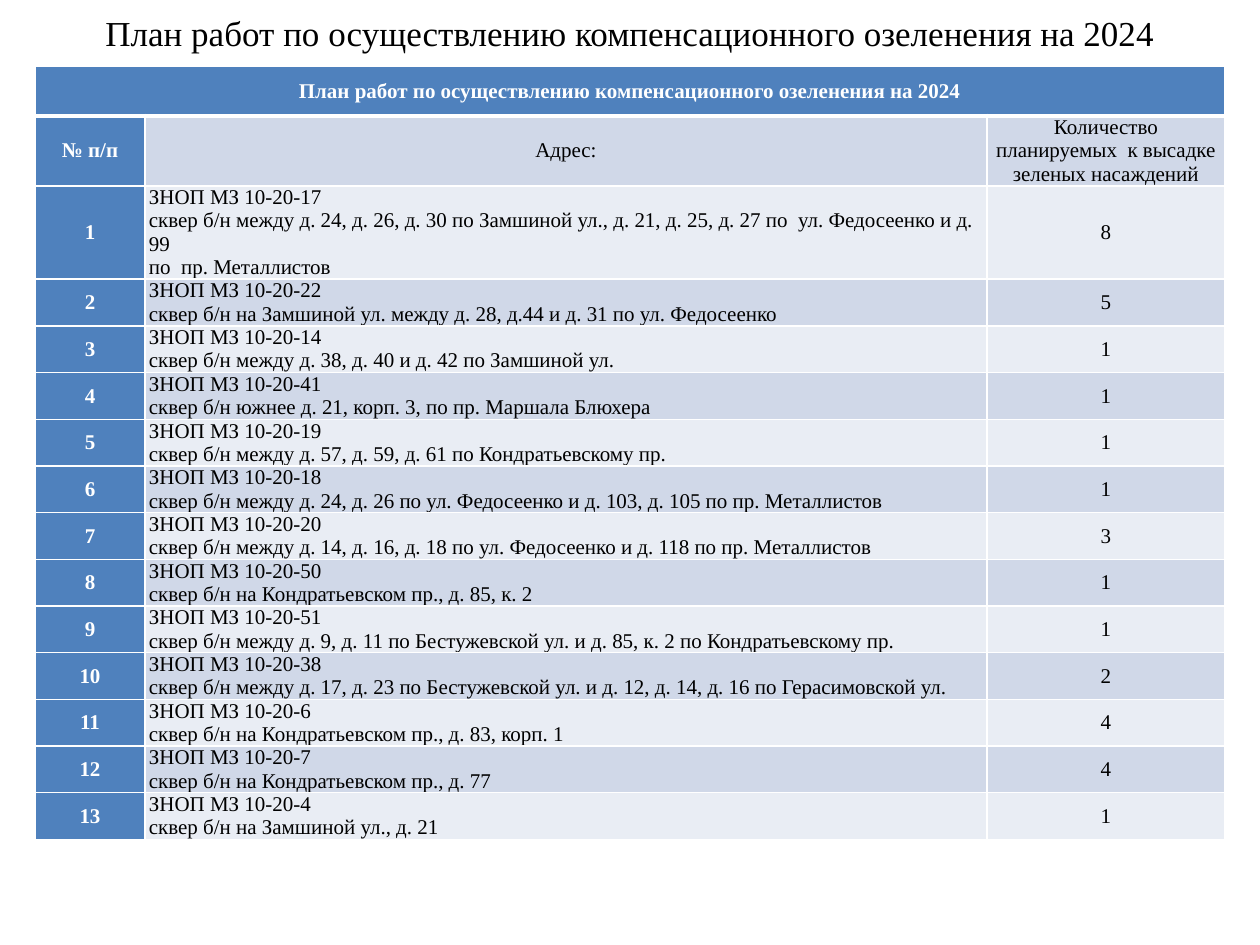
from dataclasses import dataclass

from lxml import etree
from pptx import Presentation
from pptx import util as u
from pptx.dml import color
from pptx.enum import text
from pptx.oxml import ns

EMU_PER_PX = 914400 / 126
FONT = "Times New Roman"
COLOURS = {
    "accent": "4F81BD",
    "band_dark": "D0D8E8",
    "band_light": "E9EDF4",
    "white": "FFFFFF",
    "black": "000000",
}
TITLE = "План работ по осуществлению компенсационного озеленения на 2024"
COLUMN_WIDTHS = (110, 842, 238)
HEADER_HEIGHT, HEADINGS_HEIGHT, TALL_HEIGHT, ROW_HEIGHT = 50, 69, 93, 46


@dataclass(frozen=True)
class Style:
    fill: str
    ink: str
    bold: bool = False
    align: text.PP_ALIGN = text.PP_ALIGN.CENTER
    anchor: text.MSO_ANCHOR = text.MSO_ANCHOR.MIDDLE
    bottom_pt: int = 1


@dataclass(frozen=True)
class Site:
    code: str
    address: tuple[str, ...]
    count: int


SITES = (
    Site("17", ("сквер б/н между д. 24, д. 26, д. 30 по Замшиной ул., д. 21, д. 25, д. 27 по  ул. Федосеенко и д. 99",
                "по  пр. Металлистов"), 8),
    Site("22", ("сквер б/н на Замшиной ул. между д. 28, д.44 и д. 31 по ул. Федосеенко",), 5),
    Site("14", ("сквер б/н между д. 38, д. 40 и д. 42 по Замшиной ул.",), 1),
    Site("41", ("сквер б/н южнее д. 21, корп. 3, по пр. Маршала Блюхера",), 1),
    Site("19", ("сквер б/н между д. 57, д. 59, д. 61 по Кондратьевскому пр.",), 1),
    Site("18", ("сквер б/н между д. 24, д. 26 по ул. Федосеенко и д. 103, д. 105 по пр. Металлистов",), 1),
    Site("20", ("сквер б/н между д. 14, д. 16, д. 18 по ул. Федосеенко и д. 118 по пр. Металлистов",), 3),
    Site("50", ("сквер б/н на Кондратьевском пр., д. 85, к. 2",), 1),
    Site("51", ("сквер б/н между д. 9, д. 11 по Бестужевской ул. и д. 85, к. 2 по Кондратьевскому пр.",), 1),
    Site("38", ("сквер б/н между д. 17, д. 23 по Бестужевской ул. и д. 12, д. 14, д. 16 по Герасимовской ул.",), 2),
    Site("6", ("сквер б/н на Кондратьевском пр., д. 83, корп. 1",), 4),
    Site("7", ("сквер б/н на Кондратьевском пр., д. 77",), 4),
    Site("4", ("сквер б/н на Замшиной ул., д. 21",), 1),
)


def px(length: int) -> u.Emu:
    return u.Emu(round(length * EMU_PER_PX))


def assign(target, values: dict) -> None:
    for name, value in values.items():
        setattr(target, name, value)


def write(frame, lines: tuple[str, ...], size: int, ink: str, bold: bool, align) -> None:
    for index, line in enumerate(lines):
        para = frame.paragraphs[0] if index == 0 else frame.add_paragraph()
        para.alignment = align
        span = para.add_run()
        span.text = line
        assign(span.font, {"name": FONT, "size": u.Pt(size), "bold": bold})
        span.font.color.rgb = color.RGBColor.from_string(COLOURS[ink])


def add_borders(cell, bottom_pt: int) -> None:
    properties = cell._tc.get_or_add_tcPr()
    for side, width in (("L", 1), ("R", 1), ("T", 1), ("B", bottom_pt)):
        line = etree.SubElement(properties, ns.qn(f"a:ln{side}"), w=str(u.Pt(width)))
        fill = etree.SubElement(line, ns.qn("a:solidFill"))
        etree.SubElement(fill, ns.qn("a:srgbClr"), val=COLOURS["white"])


def fill_cell(cell, lines: tuple[str, ...], style: Style) -> None:
    add_borders(cell, style.bottom_pt)
    cell.fill.solid()
    cell.fill.fore_color.rgb = color.RGBColor.from_string(COLOURS[style.fill])
    assign(cell, {
        "margin_left": px(4),
        "margin_right": px(4),
        "margin_top": 0,
        "margin_bottom": 0,
        "vertical_anchor": style.anchor,
    })
    write(cell.text_frame, lines, 12, style.ink, style.bold, style.align)


def add_title(page) -> None:
    box = page.shapes.title
    assign(box, {"left": 0, "top": 0, "width": px(1260), "height": px(65)})
    assign(box.text_frame, {
        "word_wrap": True,
        "auto_size": text.MSO_AUTO_SIZE.NONE,
        "vertical_anchor": text.MSO_ANCHOR.MIDDLE,
    })
    write(box.text_frame, (TITLE,), 20, "black", False, text.PP_ALIGN.CENTER)


def add_plan(page) -> None:
    heights = [HEADER_HEIGHT, HEADINGS_HEIGHT]
    heights += [TALL_HEIGHT if len(site.address) > 1 else ROW_HEIGHT for site in SITES]
    table = page.shapes.add_table(
        len(heights), len(COLUMN_WIDTHS), px(35), px(66),
        px(sum(COLUMN_WIDTHS)), px(sum(heights))).table
    assign(table, {"first_row": True, "first_col": True, "horz_banding": True})
    for column, width in zip(table.columns, COLUMN_WIDTHS):
        column.width = px(width)
    for row, height in zip(table.rows, heights):
        row.height = px(height)

    table.cell(0, 0).merge(table.cell(0, 2))
    fill_cell(table.cell(0, 0), (TITLE,), Style("accent", "white", True, bottom_pt=3))

    label = Style("accent", "white", True)
    heading = Style("band_dark", "black")
    fill_cell(table.cell(1, 0), ("№ п/п",), label)
    fill_cell(table.cell(1, 1), ("Адрес:",), heading)
    fill_cell(table.cell(1, 2), ("Количество планируемых  к высадке зеленых насаждений",), heading)

    for number, site in enumerate(SITES, 1):
        band = "band_light" if number % 2 else "band_dark"
        address = Style(band, "black", align=text.PP_ALIGN.LEFT, anchor=text.MSO_ANCHOR.BOTTOM)
        row = number + 1
        fill_cell(table.cell(row, 0), (str(number),), label)
        fill_cell(table.cell(row, 1), (f"ЗНОП МЗ 10-20-{site.code}", *site.address), address)
        fill_cell(table.cell(row, 2), (str(site.count),), Style(band, "black"))


def main() -> None:
    deck = Presentation()
    assign(deck, {"slide_width": px(1260), "slide_height": px(945)})
    page = deck.slides.add_slide(deck.slide_layouts.get_by_name("Title Only"))
    add_title(page)
    add_plan(page)
    deck.save("out.pptx")


if __name__ == "__main__":
    main()
